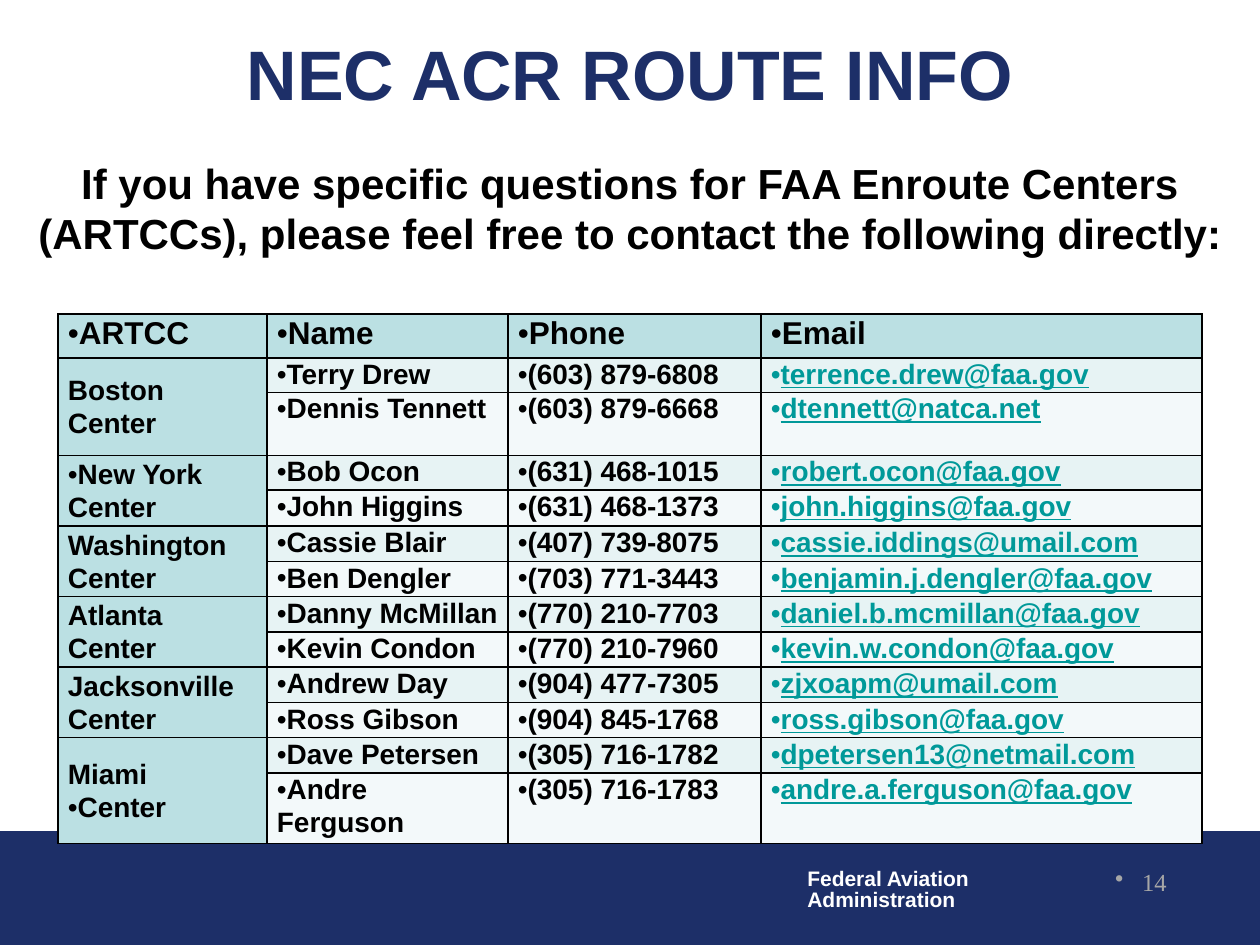
from dataclasses import dataclass

from lxml import etree
from pptx import Presentation
from pptx.dml.color import RGBColor
from pptx.enum import shapes, text
from pptx.oxml import ns
from pptx.util import Emu, Pt

PX = 914400 / 126
NAVY, BLACK, WHITE = "1D2F68", "000000", "FFFFFF"
AQUA, TEAL, GRAY = "BBE0E3", "009999", "A6A6A6"
BANDS = ("E7F3F4", "F3F9FA")


@dataclass
class Contact:
    name: str
    phone: str
    email: str


@dataclass
class Center:
    lines: tuple[str, str]
    contacts: tuple[Contact, Contact]
    bulleted_line: int | None = None


HEADERS = ("ARTCC", "Name", "Phone", "Email")
COLUMN_WIDTHS = (209, 241, 253, 441)
ROW_HEIGHTS = (44, 32, 63, *[32] * 9, 65)
CENTERS = (
    Center(("Boston", "Center"), (
        Contact("Terry Drew", "(603) 879-6808", "terrence.drew@faa.gov"),
        Contact("Dennis Tennett", "(603) 879-6668", "dtennett@natca.net"))),
    Center(("New York", "Center"), (
        Contact("Bob Ocon", "(631) 468-1015", "robert.ocon@faa.gov"),
        Contact("John Higgins", "(631) 468-1373", "john.higgins@faa.gov")), 0),
    Center(("Washington", "Center"), (
        Contact("Cassie Blair", "(407) 739-8075", "cassie.iddings@umail.com"),
        Contact("Ben Dengler", "(703) 771-3443", "benjamin.j.dengler@faa.gov"))),
    Center(("Atlanta", "Center"), (
        Contact("Danny McMillan", "(770) 210-7703", "daniel.b.mcmillan@faa.gov"),
        Contact("Kevin Condon", "(770) 210-7960", "kevin.w.condon@faa.gov"))),
    Center(("Jacksonville", "Center"), (
        Contact("Andrew Day", "(904) 477-7305", "zjxoapm@umail.com"),
        Contact("Ross Gibson", "(904) 845-1768", "ross.gibson@faa.gov"))),
    Center(("Miami", "Center"), (
        Contact("Dave Petersen", "(305) 716-1782", "dpetersen13@netmail.com"),
        Contact("Andre Ferguson", "(305) 716-1783", "andre.a.ferguson@faa.gov")), 1),
)


def px(length: int) -> Emu:
    return Emu(round(length * PX))


def color(value: str) -> RGBColor:
    return RGBColor.from_string(value)


def place(shape, left: int, top: int, width: int, height: int) -> None:
    shape.left, shape.top = px(left), px(top)
    shape.width, shape.height = px(width), px(height)


def write(paragraph, content: str, *, size: int, fill: str = BLACK, font: str = "Arial",
          bold: bool = True, underline: bool = False, align=text.PP_ALIGN.LEFT,
          spacing: float = 1.0, bullet: bool = False, bullet_font: str | None = "Arial",
          hanging: int = 0) -> None:
    properties = paragraph._p.get_or_add_pPr()
    properties.set("marL", str(px(hanging)))
    properties.set("indent", str(-px(hanging)))
    if bullet:
        if bullet_font:
            etree.SubElement(properties, ns.qn("a:buFont"), typeface=bullet_font)
        etree.SubElement(properties, ns.qn("a:buChar")).set("char", "•")
    else:
        etree.SubElement(properties, ns.qn("a:buNone"))
    paragraph.alignment = align
    paragraph.line_spacing = spacing
    paragraph.space_before = Pt(0)
    run = paragraph.add_run()
    run.text = content
    run.font.name = font
    run.font.size = Pt(size)
    run.font.bold = bold
    run.font.underline = underline
    run.font.color.rgb = color(fill)


def style_cell(cell, fill: str) -> None:
    properties = cell._tc.get_or_add_tcPr()
    for side in ("lnL", "lnR", "lnT", "lnB"):
        border = etree.SubElement(properties, ns.qn(f"a:{side}"), w=str(Pt(1)))
        solid = etree.SubElement(border, ns.qn("a:solidFill"))
        etree.SubElement(solid, ns.qn("a:srgbClr"), val=BLACK)
    cell.fill.solid()
    cell.fill.fore_color.rgb = color(fill)
    cell.margin_left, cell.margin_right = px(10), px(9)
    cell.margin_top = cell.margin_bottom = 0


def add_contacts(slide) -> None:
    frame = slide.shapes.add_table(len(ROW_HEIGHTS), len(HEADERS), px(58), px(314),
                                   px(sum(COLUMN_WIDTHS)), px(sum(ROW_HEIGHTS)))
    table = frame.table
    for column, width in zip(table.columns, COLUMN_WIDTHS):
        column.width = px(width)
    for row, height in zip(table.rows, ROW_HEIGHTS):
        row.height = px(height)
    for row in range(len(ROW_HEIGHTS)):
        for column in range(len(HEADERS)):
            fill = AQUA if row == 0 or column == 0 else BANDS[(row - 1) % 2]
            style_cell(table.cell(row, column), fill)
    for column, header in enumerate(HEADERS):
        write(table.cell(0, column).text_frame.paragraphs[0], header,
              size=18, spacing=1.05, bullet=True)
    for index, center in enumerate(CENTERS):
        first_row = 1 + 2 * index
        label = table.cell(first_row, 0)
        label.merge(table.cell(first_row + 1, 0))
        label.vertical_anchor = text.MSO_ANCHOR.MIDDLE
        label.text_frame.add_paragraph()
        for number, line in enumerate(center.lines):
            write(label.text_frame.paragraphs[number], line, size=16, spacing=1.05,
                  bullet=number == center.bulleted_line)
        for row, contact in enumerate(center.contacts, first_row):
            values = (contact.name, contact.phone, contact.email)
            for column, value in enumerate(values, 1):
                is_email = column == 3
                cell = table.cell(row, column)
                if index < 2:
                    cell.margin_top = px(1)
                write(cell.text_frame.paragraphs[0], value, size=16,
                      fill=TEAL if is_email else BLACK, underline=is_email,
                      spacing=1.0 if index < 2 else 1.05, bullet=True)


def add_footer(slide) -> None:
    band = slide.shapes.add_shape(shapes.MSO_SHAPE.RECTANGLE,
                                  px(0), px(832), px(1260), px(112))
    band.shadow.inherit = False
    band.fill.solid()
    band.fill.fore_color.rgb = color(NAVY)
    band.line.color.rgb = color(NAVY)
    band.line.width = Pt(0.75)

    agency = slide.shapes.add_textbox(px(795), px(863), px(189), px(55)).text_frame
    agency.word_wrap = False
    agency.add_paragraph()
    for paragraph, line in zip(agency.paragraphs, ("Federal Aviation", "Administration")):
        write(paragraph, line, size=12, fill=WHITE, spacing=0.85)

    number = slide.shapes.add_textbox(px(917), px(861), px(262), px(63)).text_frame
    number.word_wrap = True
    write(number.paragraphs[0], "14", size=14, fill=GRAY, font="Times New Roman",
          bold=False, align=text.PP_ALIGN.RIGHT, bullet=True, bullet_font=None,
          hanging=27)


def main() -> None:
    presentation = Presentation()
    presentation.slide_width, presentation.slide_height = px(1260), px(945)
    slide = presentation.slides.add_slide(presentation.slide_layouts[1])
    add_footer(slide)

    title = slide.shapes.title
    place(title, 0, 30, 1260, 84)
    title.text_frame.vertical_anchor = text.MSO_ANCHOR.MIDDLE
    write(title.text_frame.paragraphs[0], "NEC ACR ROUTE INFO", size=40, fill=NAVY,
          align=text.PP_ALIGN.CENTER)

    body = slide.placeholders[1]
    place(body, 0, 151, 1260, 708)
    write(body.text_frame.paragraphs[0],
          "If you have specific questions for FAA Enroute Centers (ARTCCs), "
          "please feel free to contact the following directly:",
          size=24, align=text.PP_ALIGN.CENTER)

    add_contacts(slide)
    presentation.save("out.pptx")


if __name__ == "__main__":
    main()
